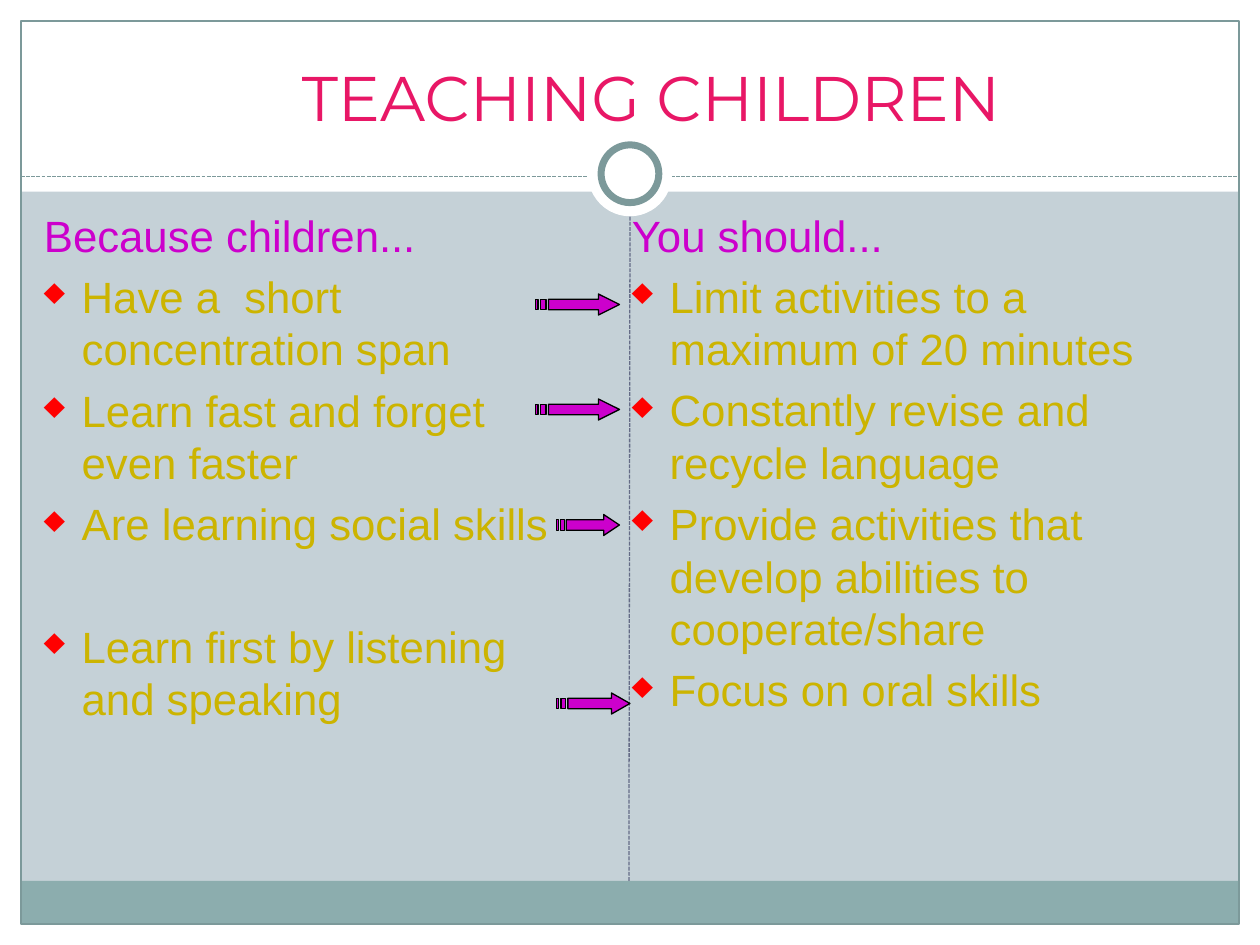
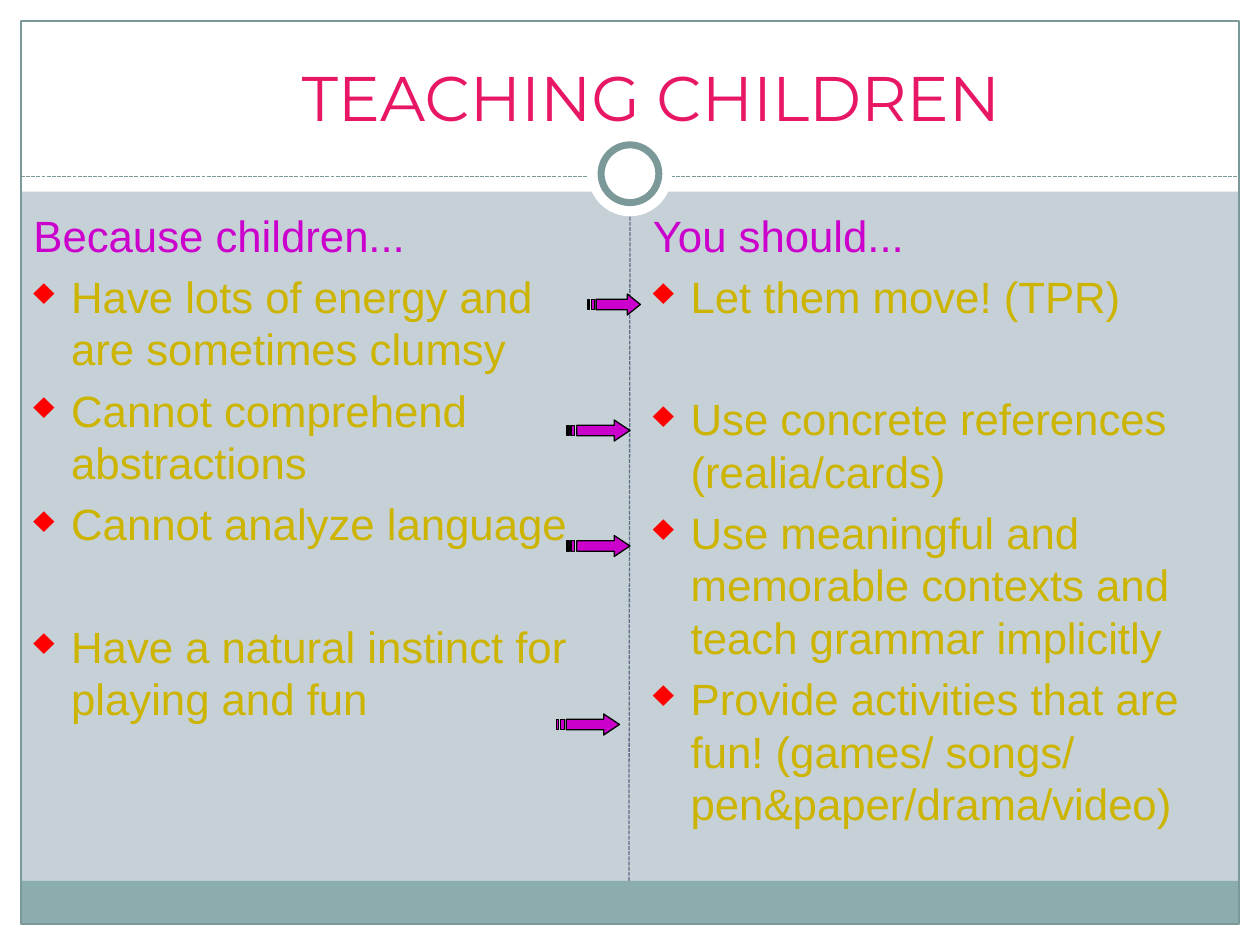
"""Build two slides that pair traits of children with teaching advice."""
from lxml import etree
from pptx import Presentation, util as u
from pptx.dml.color import RGBColor
from pptx.enum import dml, shapes, text
from pptx.oxml import ns

COLORS = {"sage": "C5D1D7", "white": "FFFFFF", "teal": "8CADAE", "edge": "7C999A",
          "divider": "646B86", "title": "E81766", "purple": "CC00CC",
          "gold": "CCB400", "red": "FF0000", "black": "000000"}
COLUMNS, ROWS = 120, 90
CELL = u.Inches(10) // COLUMNS
SIZE, LEADING, GAP = 25, 30, 5
SKIPPED_LINE = LEADING + GAP
ARROW_CONTOURS = [
    [(24, 0), (24, 1), (5, 1), (5, 3), (24, 3), (24, 4), (32, 2)],
    [(2, 1), (2, 3), (4, 3), (4, 1)],
    [(0, 1), (0, 3), (1, 3), (1, 1)],
]


def cells(*counts):
    """Turn grid counts into lengths."""
    return [u.Emu(round(count * CELL)) for count in counts]


def color(name):
    """Look up a colour by name."""
    return RGBColor.from_string(COLORS[name])


def paint(shape, fill=None, line=None, width=0.75):
    """Set fill and line of a shape and drop its shadow."""
    shape.shadow.inherit = False
    if fill:
        shape.fill.solid()
        shape.fill.fore_color.rgb = color(fill)
    else:
        shape.fill.background()
    if line:
        shape.line.color.rgb = color(line)
        shape.line.width = u.Pt(width)
    else:
        shape.line.fill.background()


def add_figure(page, kind, area, **look):
    """Add a painted preset shape."""
    paint(page.shapes.add_shape(kind, *cells(*area)), **look)


def add_dashes(page, ends, line):
    """Add a thin dashed line."""
    rule = page.shapes.add_connector(shapes.MSO_CONNECTOR.STRAIGHT, *cells(*ends))
    rule.line.color.rgb = color(line)
    rule.line.width = u.Pt(0.75)
    rule.line.dash_style = dml.MSO_LINE.SQUARE_DOT
    etree.SubElement(rule._element.spPr, ns.qn("a:effectLst"))


def add_frame(page):
    """Draw the background, margins, footer band, rules and ring."""
    page.background.fill.solid()
    page.background.fill.fore_color.rgb = color("sage")
    rectangle, oval = shapes.MSO_SHAPE.RECTANGLE, shapes.MSO_SHAPE.OVAL
    margins = [(0, 88, COLUMNS, 2), (0, 0, COLUMNS, 18.25),
               (0, 0, 2, ROWS), (118, 0, 2, ROWS)]
    for margin in margins:
        add_figure(page, rectangle, margin, fill="white")
    add_figure(page, rectangle, (2, 83.9, 116, 4.1), fill="teal")
    add_figure(page, rectangle, (2, 2, 116, 86), line="edge")
    add_dashes(page, (2, 16.8, 118, 16.8), "edge")
    add_figure(page, oval, (56, 12.6, 8, 8), fill="white")
    add_figure(page, oval, (57.25, 13.8, 5.5, 5.5), fill="white", line="edge", width=4)
    add_dashes(page, (59.9, 83.9, 60, 20.6), "divider")


def add_title(page, title):
    """Write the slide title."""
    frame = page.shapes.add_textbox(*cells(25, 5, 74, 11)).text_frame
    frame.word_wrap = False
    para = frame.paragraphs[0]
    para.text = title
    para.alignment = text.PP_ALIGN.CENTER
    para.font.name, para.font.size = "Montserrat", u.Pt(36)
    para.font.color.rgb = color("title")


def style_line(para, wording, ink, before):
    """Write one line of a list with its hanging indent."""
    para.text = wording
    para.line_spacing, para.space_before = u.Pt(LEADING), u.Pt(before)
    para.font.name, para.font.size = "Arial", u.Pt(SIZE)
    para.font.color.rgb = color(ink)
    props = para._p.get_or_add_pPr()
    props.set("marL", str(u.Inches(0.3)))
    props.set("indent", str(-u.Inches(0.3)))
    return props


def add_bullet(props):
    """Put a red diamond before a paragraph."""
    marks = [etree.Element(ns.qn(f"a:{tag}")) for tag in ("buClr", "buSzPct", "buChar")]
    etree.SubElement(marks[0], ns.qn("a:srgbClr"), val=COLORS["red"])
    marks[1].set("val", "85000")
    marks[2].set("char", "♦")
    for place, mark in enumerate(marks):
        props.insert_element_before(mark, "a:tabLst", "a:defRPr", "a:extLst")


def add_list(page, area, heading, items, spaced_item=None):
    """Write a heading and bullets, with a line left free above one item."""
    frame = page.shapes.add_textbox(*cells(*area)).text_frame
    frame.word_wrap = True
    frame.margin_top = u.Inches(0.07)
    style_line(frame.paragraphs[0], heading, "purple", 0)
    for number, item in enumerate(items):
        before = GAP + (SKIPPED_LINE if number == spaced_item else 0)
        add_bullet(style_line(frame.add_paragraph(), item, "gold", before))


def add_arrow(page, left, top, width, height=2):
    """Draw a striped arrow pointing right."""
    scale = (width * CELL / 32, height * CELL / 4)
    first, *stripes = ARROW_CONTOURS
    builder = page.shapes.build_freeform(*first[0], scale=scale)
    builder.add_line_segments(first[1:], close=True)
    for stripe in stripes:
        builder.move_to(*stripe[0])
        builder.add_line_segments(stripe[1:], close=True)
    paint(builder.convert_to_shape(*cells(left, top)), fill="purple", line="black")


def add_page(deck, traits, advice, arrows):
    """Add one slide with traits, advice and the arrows between them."""
    page = deck.slides.add_slide(deck.slide_layouts[6])
    add_frame(page)
    add_list(page, traits["area"], "Because children...", traits["items"], traits["spaced"])
    add_list(page, advice["area"], "You should...", advice["items"], advice["spaced"])
    add_title(page, "TEACHING CHILDREN")
    for arrow in arrows:
        add_arrow(page, *arrow)


def main():
    """Build and save the deck."""
    deck = Presentation()
    deck.slide_width, deck.slide_height = cells(COLUMNS, ROWS)
    add_page(
        deck,
        {"area": (3, 19, 52, 68), "spaced": 3, "items": [
            "Have a  short concentration span",
            "Learn fast and forget even faster",
            "Are learning social skills",
            "Learn first by listening and speaking"]},
        {"area": (59, 19, 58, 60), "spaced": None, "items": [
            "Limit activities to a maximum of 20 minutes",
            "Constantly revise and recycle language",
            "Provide activities that develop abilities to cooperate/share",
            "Focus on oral skills"]},
        [(51, 28, 8), (51, 38, 8), (53, 49, 6), (53, 66, 7)])
    add_page(
        deck,
        {"area": (2, 19, 57, 68), "spaced": 3, "items": [
            "Have lots of energy and are sometimes clumsy",
            "Cannot comprehend abstractions",
            "Cannot analyze language",
            "Have a natural instinct for playing and fun"]},
        {"area": (61, 19, 59, 68), "spaced": 1, "items": [
            "Let them move! (TPR)",
            "Use concrete references (realia/cards)",
            "Use meaningful and memorable contexts and teach grammar implicitly",
            "Provide activities that are fun! (games/ songs/ pen&paper/drama/video)"]},
        [(56, 28, 5), (54, 40, 6), (53, 68, 6), (54, 51, 6)])
    deck.save("out.pptx")


if __name__ == "__main__":
    main()
